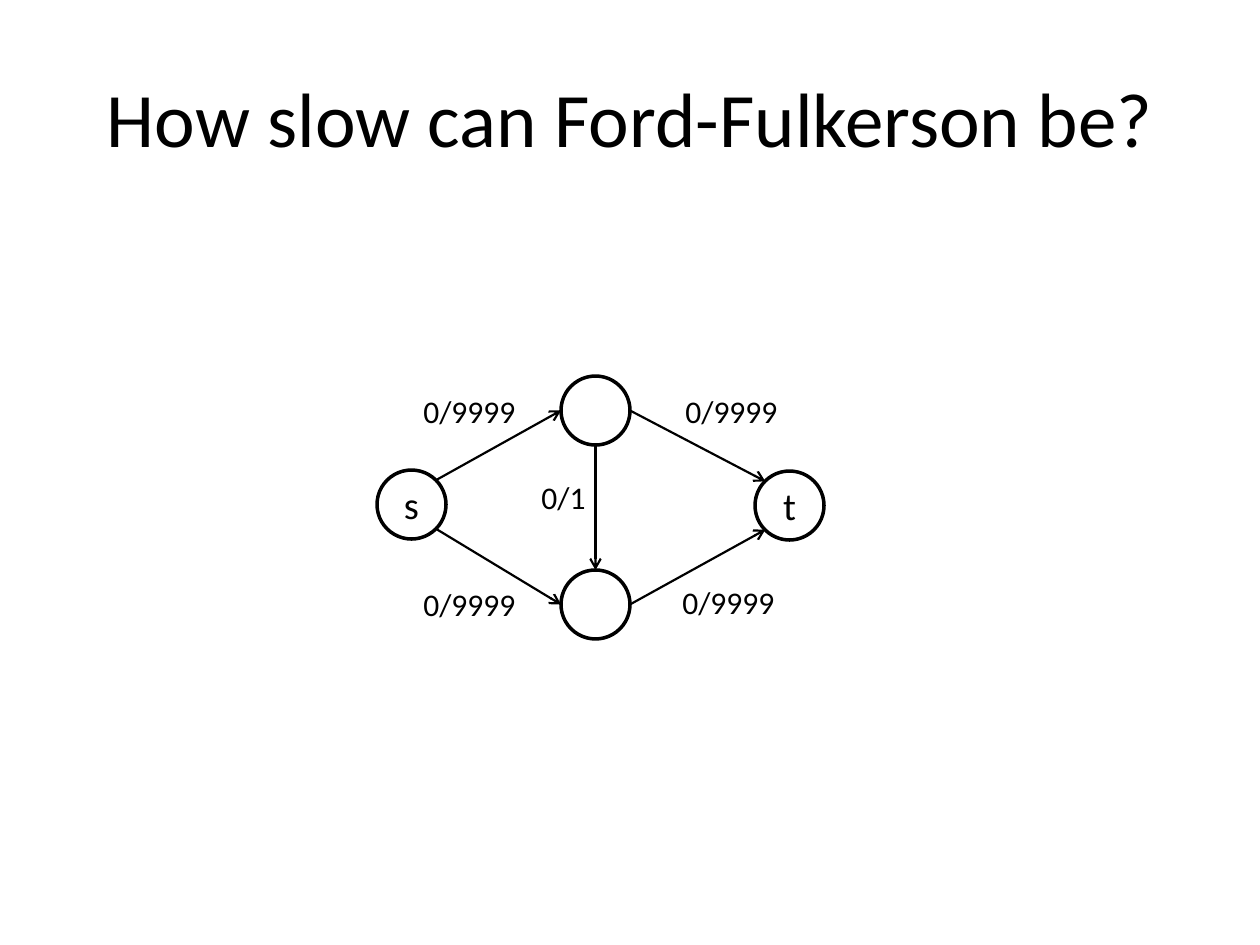
from lxml import etree
from pptx import Presentation
from pptx.dml.color import RGBColor
from pptx.enum import shapes, text
from pptx.oxml import ns
from pptx.util import Pt

PX = 914400 / 126
INK = {"black": "000000", "white": "FFFFFF"}
BLACK = RGBColor.from_string(INK["black"])


def scale(*spans):
    return [round(span * PX) for span in spans]


def write(shape, words, size, align, wrap):
    frame = shape.text_frame
    frame.text = words
    frame.word_wrap = wrap
    frame.vertical_anchor = text.MSO_ANCHOR.MIDDLE
    line = frame.paragraphs[0]
    line.alignment = align
    for run in line.runs:
        run.font.name = "Calibri"
        run.font.size = Pt(size)
        run.font.color.rgb = BLACK


deck = Presentation()
deck.slide_width, deck.slide_height = scale(1260, 945)
slide = deck.slides.add_slide(deck.slide_layouts[6])
slide.background.fill.solid()
slide.background.fill.fore_color.rgb = RGBColor.from_string(INK["white"])
items = slide.shapes

title = items.add_textbox(*scale(63, 38, 1134, 157))
write(title, "How slow can Ford-Fulkerson be?", 44, text.PP_ALIGN.CENTER, True)

SIZE = 69
nodes = {
    "source": (377, 470, "s"),
    "upper": (561, 376, ""),
    "lower": (561, 570, ""),
    "sink": (755, 471, "t"),
}
for left, top, name in nodes.values():
    node = items.add_shape(shapes.MSO_SHAPE.OVAL, *scale(left, top, SIZE, SIZE))
    node.shadow.inherit = False
    node.fill.background()
    node.line.color.rgb = BLACK
    node.line.width = Pt(2)
    write(node, name, 22, text.PP_ALIGN.CENTER, True)

ports = {
    "left": (0, 0.5), "right": (1, 0.5), "top": (0.5, 0), "bottom": (0.5, 1),
    "northwest": (0.15, 0.15), "northeast": (0.85, 0.15),
    "southwest": (0.15, 0.85), "southeast": (0.85, 0.85),
}
edges = [
    ("source", "northeast", "upper", "left"),
    ("source", "southeast", "lower", "left"),
    ("upper", "right", "sink", "northwest"),
    ("lower", "right", "sink", "southwest"),
    ("upper", "bottom", "lower", "top"),
]
for start, exit, end, entry in edges:
    points = []
    for node, port in ((start, exit), (end, entry)):
        left, top, name = nodes[node]
        across, down = ports[port]
        points += [left + across * SIZE, top + down * SIZE]
    edge = items.add_connector(shapes.MSO_CONNECTOR.STRAIGHT, *scale(*points))
    edge.line.color.rgb = BLACK
    edge.line.width = Pt(1.25)
    etree.SubElement(edge.line._get_or_add_ln(), ns.qn("a:tailEnd"), type="arrow")
    etree.SubElement(edge._element.spPr, ns.qn("a:effectLst"))

labels = [
    (411, 386, 118, "0/9999"),
    (411, 579, 118, "0/9999"),
    (670, 577, 118, "0/9999"),
    (673, 386, 118, "0/9999"),
    (529, 472, 70, "0/1"),
]
for left, top, width, flow in labels:
    label = items.add_textbox(*scale(left, top, width, 50))
    write(label, flow, 18, text.PP_ALIGN.LEFT, False)
    label.text_frame.auto_size = text.MSO_AUTO_SIZE.SHAPE_TO_FIT_TEXT

deck.save("out.pptx")
